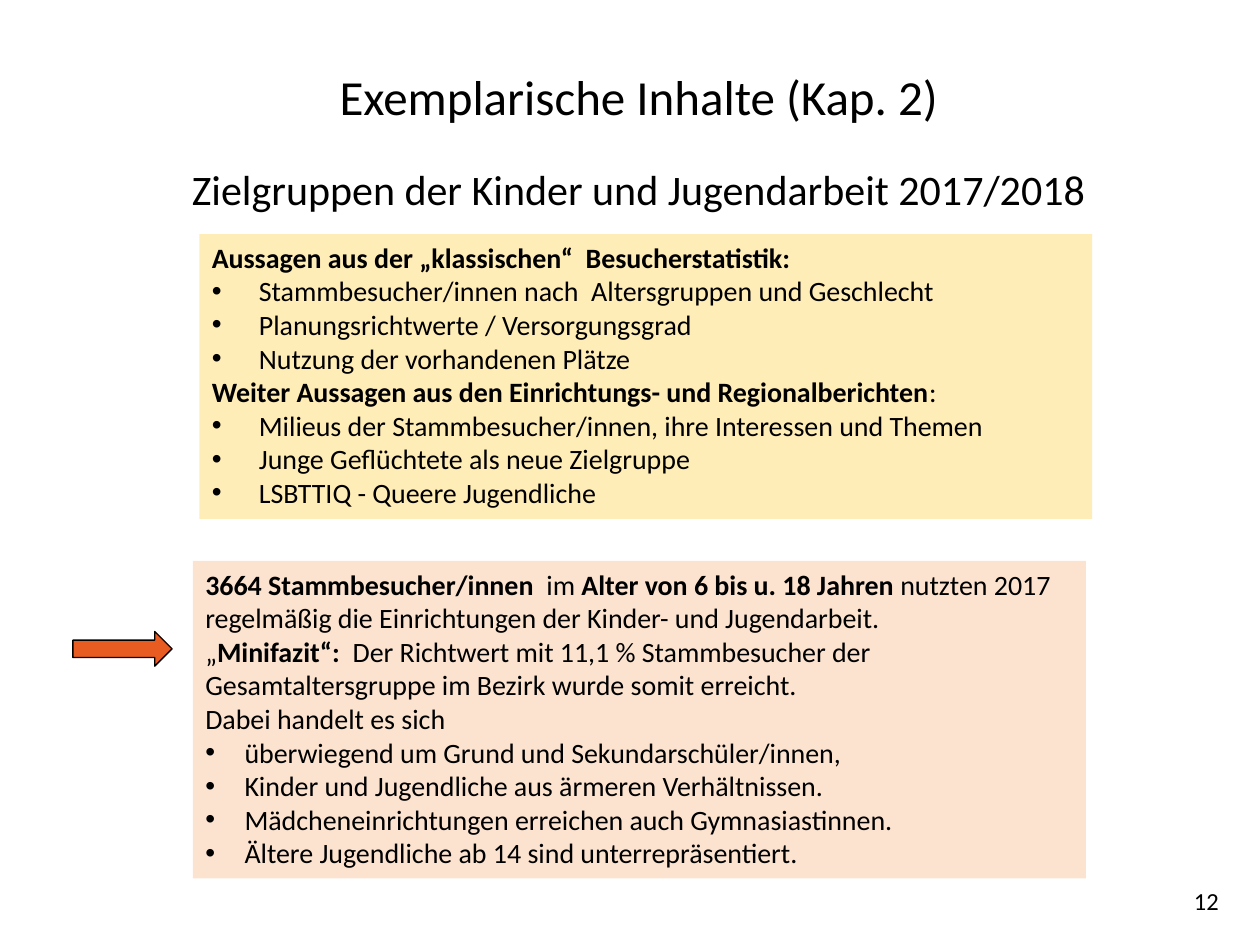
from pptx import Presentation
from pptx import util as u
from pptx.dml.color import RGBColor
from pptx.enum import shapes, text
from pptx.oxml.ns import qn
from lxml import etree

TITLE = [("Exemplarische Inhalte (Kap. 2)", 28, 0),
         ("Zielgruppen der Kinder und Jugendarbeit 2017/2018", 24, 22)]
BOXES = [
    {"at": (4.02, 4.72, 18, 5.74), "fill": "FFEDB7", "hang": 0.95, "paras": [
        [("Aussagen aus der „klassischen“  Besucherstatistik:", True)],
        "Stammbesucher/innen nach  Altersgruppen und Geschlecht",
        "Planungsrichtwerte / Versorgungsgrad",
        "Nutzung der vorhandenen Plätze",
        [("Weiter Aussagen aus den Einrichtungs- und Regionalberichten", True),
         (":", False)],
        "Milieus der Stammbesucher/innen, ihre Interessen und Themen",
        "Junge Geflüchtete als neue Zielgruppe",
        "LSBTTIQ - Queere Jugendliche"]},
    {"at": (3.89, 11.31, 18, 6.4), "fill": "FCE3CF", "hang": 0.79, "paras": [
        [("3664 Stammbesucher/innen", True), ("  im ", False),
         ("Alter von 6 bis u. 18 Jahren ", True),
         ("nutzten 2017 regelmäßig die Einrichtungen der "
          "Kinder- und Jugendarbeit.", False)],
        [("„", False), ("Minifazit“:  ", True),
         ("Der Richtwert mit 11,1 % Stammbesucher der Gesamtaltersgruppe "
          "im Bezirk wurde somit erreicht.", False)],
        [("Dabei handelt es sich", False)],
        "überwiegend um Grund und Sekundarschüler/innen,",
        "Kinder und Jugendliche aus ärmeren Verhältnissen.",
        "Mädcheneinrichtungen erreichen auch Gymnasiastinnen.",
        "Ältere Jugendliche ab 14 sind unterrepräsentiert."]},
]
ARROW = (1.47, 12.73, 2, 0.7)
NUMBER = ("12", (18.9, 17.73, 5.92, 1.32))
LEFT, MID, RIGHT = (text.PP_ALIGN.LEFT, text.PP_ALIGN.CENTER,
                    text.PP_ALIGN.RIGHT)


def tint(code):
    return RGBColor.from_string(code)


def span(at):
    return [u.Cm(n) for n in at]


def apply(obj, **vals):
    for key, val in vals.items():
        setattr(obj, key, val)


def frame(shape):
    tf = shape.text_frame
    apply(tf, word_wrap=True, auto_size=text.MSO_AUTO_SIZE.NONE,
          vertical_anchor=text.MSO_ANCHOR.TOP)
    return tf


def para(tf, num):
    return tf.add_paragraph() if num else tf.paragraphs[0]


def write(par, runs, size, align=LEFT):
    par.alignment = align
    for words, bold in runs:
        run = par.add_run()
        run.text = words
        apply(run.font, name="Calibri", size=u.Pt(size), bold=bold)
        run.font.color.rgb = tint("000000")


def bullet(par, hang):
    props = par._p.get_or_add_pPr()
    apply_ind = u.Cm(hang)
    props.set("marL", str(apply_ind))
    props.set("indent", str(-apply_ind))
    etree.SubElement(props, qn("a:buFont")).set("typeface", "Arial")
    etree.SubElement(props, qn("a:buChar")).set("char", "•")


def block(slide, kind, at, fill):
    shape = slide.shapes.add_shape(kind, *span(at))
    shape.shadow.inherit = False
    shape.fill.solid()
    shape.fill.fore_color.rgb = tint(fill)
    return shape


def main():
    prs = Presentation()
    apply(prs, slide_width=u.Cm(25.4), slide_height=u.Cm(19.05))
    slide = prs.slides.add_slide(prs.slide_layouts[5])

    title = slide.shapes.title
    left, top, width, height = span((1.47, 1.12, 22.81, 4.4))
    apply(title, left=left, top=top, width=width, height=height)
    tf = frame(title)
    tf.margin_top = u.Cm(0.22)
    for num, (words, size, gap) in enumerate(TITLE):
        par = para(tf, num)
        par.space_before = u.Pt(gap)
        write(par, [(words, False)], size, MID)

    for box in BOXES:
        shape = block(slide, shapes.MSO_SHAPE.RECTANGLE, box["at"], box["fill"])
        shape.line.fill.background()
        tf = frame(shape)
        for num, item in enumerate(box["paras"]):
            par = para(tf, num)
            if isinstance(item, str):
                bullet(par, box["hang"])
                item = [(item, False)]
            write(par, item, 16)

    arrow = block(slide, shapes.MSO_SHAPE.RIGHT_ARROW, ARROW, "E85B21")
    arrow.line.color.rgb = tint("000000")
    arrow.line.width = u.Pt(0.75)

    words, at = NUMBER
    tf = frame(slide.shapes.add_textbox(*span(at)))
    write(tf.paragraphs[0], [(words, False)], 14, RIGHT)
    prs.save("out.pptx")


if __name__ == "__main__":
    main()
